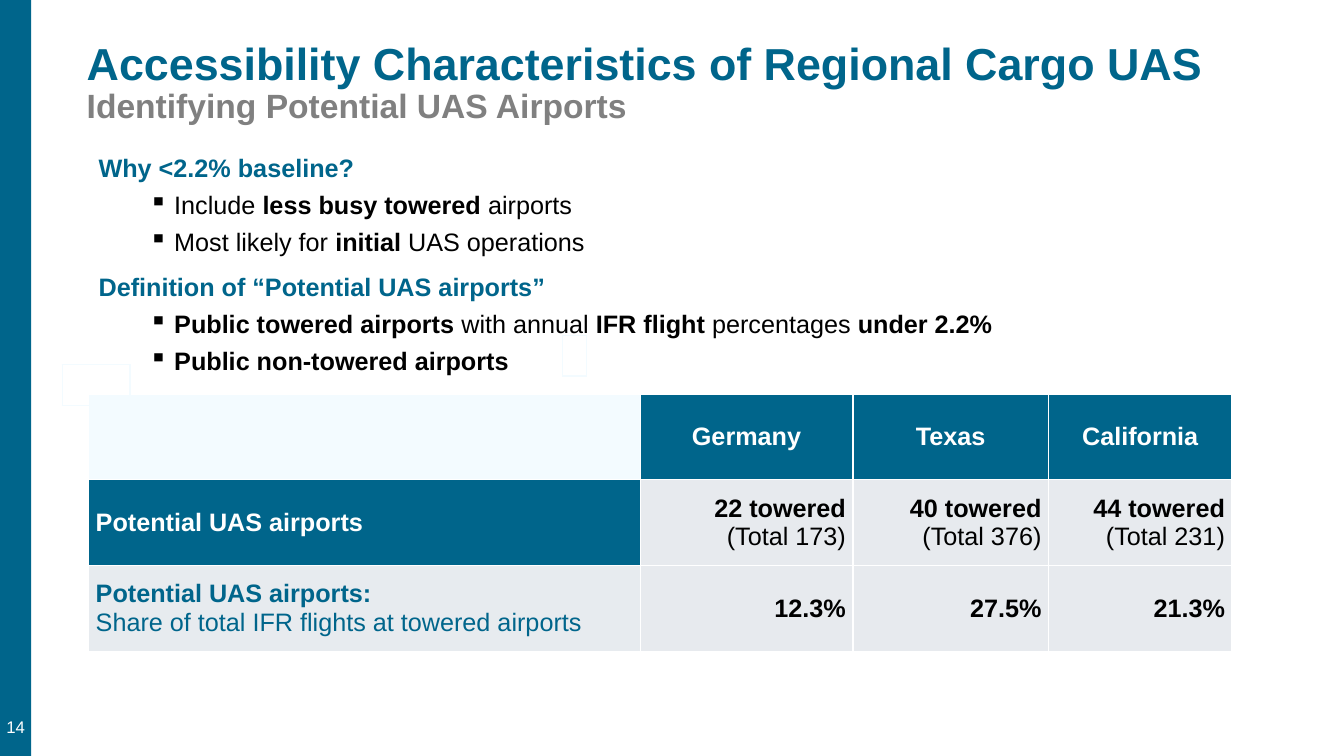
"""Build the slide on accessibility characteristics of regional cargo UAS."""
import lxml.etree
import pptx
import pptx.dml.color
import pptx.enum.shapes
import pptx.enum.text
import pptx.oxml.ns
import pptx.util

RGBColor = pptx.dml.color.RGBColor
ALIGN = pptx.enum.text.PP_ALIGN
ANCHOR = pptx.enum.text.MSO_ANCHOR

TEAL = RGBColor(0x00, 0x65, 0x8B)
GREY = RGBColor(0x80, 0x80, 0x80)
BLACK = RGBColor(0x00, 0x00, 0x00)
WHITE = RGBColor(0xFF, 0xFF, 0xFF)
PALE = RGBColor(0xF3, 0xFB, 0xFF)
SILVER = RGBColor(0xE7, 0xEA, 0xEE)
MIST = RGBColor(0xE7, 0xEB, 0xEF)

TITLE = "Accessibility Characteristics of Regional Cargo UAS"
SUBTITLE = "Identifying Potential UAS Airports"
PAGE_NUMBER = "14"
SECTIONS = [
    ("**Why <2.2% baseline?**", [
        "Include **less busy towered **airports",
        "Most likely for **initial** UAS operations",
    ]),
    ("**Definition of “Potential UAS airports”**", [
        "**Public towered airports **with annual **IFR flight **percentages **under 2.2%**",
        "**Public non-towered airports**",
    ]),
]
ROWS = [
    [[], ["**Germany**"], ["**Texas**"], ["**California**"]],
    [["**Potential UAS airports**"], ["**22 towered**", "(Total 173)"],
     ["**40 towered**", "(Total 376)"], ["**44 towered**", "(Total 231)"]],
    [["**Potential UAS airports:**", "Share of total IFR flights at towered airports"],
     ["**12.3%**"], ["**27.5%**"], ["**21.3%**"]],
]
COLUMN_WIDTHS = [547, 211, 194, 182]
ROW_HEIGHT = 85
FRAMES = [(558, 333, 23, 40), (62, 362, 67, 40)]


def px(length):
    return pptx.util.Emu(length * 9144)


def write(para, text, size, colour, align=ALIGN.LEFT):
    para.alignment = align
    para.font.name = "Arial"
    para.font.size = pptx.util.Pt(size)
    para.font.color.rgb = colour
    para.font.bold = False
    for index, part in enumerate(text.split("**")):
        if part:
            span = para.add_run()
            span.text = part
            if index % 2:
                span.font.bold = True


def next_para(frame):
    first = frame.paragraphs[0]
    return frame.add_paragraph() if first.runs else first


def add_title(page):
    title = page.shapes.title
    title.left, title.top, title.width, title.height = map(px, (76, 36, 1195, 108))
    frame = title.text_frame
    frame.auto_size = pptx.enum.text.MSO_AUTO_SIZE.NONE
    frame.vertical_anchor = ANCHOR.TOP
    para = frame.paragraphs[0]
    para.text = f"{TITLE}\v{SUBTITLE}"
    para.alignment = ALIGN.LEFT
    para.line_spacing = 0.9
    para.font.name = "Arial"
    para.font.size = pptx.util.Pt(32)
    para.font.bold = True
    para.font.color.rgb = TEAL
    subtitle = para.runs[1]
    subtitle.font.size = pptx.util.Pt(24)
    subtitle.font.color.rgb = GREY


def add_sidebar(page):
    bar = page.shapes.add_shape(
        pptx.enum.shapes.MSO_SHAPE.RECTANGLE, 0, 0, px(31), px(750))
    bar.shadow.inherit = False
    bar.fill.solid()
    bar.fill.fore_color.rgb = TEAL
    bar.line.fill.background()
    frame = page.shapes.add_textbox(0, px(584), px(31), px(157)).text_frame
    frame.word_wrap = False
    frame.vertical_anchor = ANCHOR.BOTTOM
    frame.margin_left = frame.margin_right = px(4)
    frame.margin_top = frame.margin_bottom = px(10)
    write(frame.paragraphs[0], PAGE_NUMBER, 12, WHITE, ALIGN.CENTER)


def add_body(page):
    frame = page.shapes.add_textbox(*map(px, (88, 146, 1133, 245))).text_frame
    frame.word_wrap = True
    for number, (heading, points) in enumerate(SECTIONS):
        para = next_para(frame)
        if number:
            para.space_before = pptx.util.Pt(10)
        write(para, heading, 18, TEAL)
        for point in points:
            para = frame.add_paragraph()
            para.level = 1
            para.space_before = pptx.util.Pt(5)
            props = para._p.get_or_add_pPr()
            props.set("marL", str(px(75)))
            props.set("indent", str(px(-25)))
            lxml.etree.SubElement(props, pptx.oxml.ns.qn("a:buChar"), char="▪")
            write(para, point, 18, BLACK)


def add_plain_table(page, rows, columns, place, border):
    table = page.shapes.add_table(rows, columns, *map(px, place)).table
    table.first_row = table.horz_banding = False
    qn = pptx.oxml.ns.qn
    for cell in table.iter_cells():
        props = cell._tc.get_or_add_tcPr()
        for side in "LRTB":
            line = lxml.etree.SubElement(props, qn(f"a:ln{side}"), w="12700")
            fill = lxml.etree.SubElement(line, qn("a:solidFill"))
            lxml.etree.SubElement(fill, qn("a:srgbClr"), val=str(border))
        cell.fill.background()
    return table


def cell_style(row, column):
    if row == 0:
        return (TEAL if column else PALE), WHITE, ALIGN.CENTER
    if column:
        return SILVER, BLACK, ALIGN.RIGHT
    return (TEAL, WHITE, ALIGN.LEFT) if row == 1 else (MIST, TEAL, ALIGN.LEFT)


def add_airport_table(page):
    place = (88, 391, sum(COLUMN_WIDTHS), ROW_HEIGHT * len(ROWS))
    table = add_plain_table(page, len(ROWS), len(COLUMN_WIDTHS), place, WHITE)
    for column, width in zip(table.columns, COLUMN_WIDTHS):
        column.width = px(width)
    for row, entries in enumerate(ROWS):
        for column, lines in enumerate(entries):
            cell = table.cell(row, column)
            fill, colour, align = cell_style(row, column)
            cell.fill.solid()
            cell.fill.fore_color.rgb = fill
            cell.vertical_anchor = ANCHOR.MIDDLE
            cell.margin_left = cell.margin_right = px(7)
            cell.margin_top = cell.margin_bottom = 0
            for text in lines:
                write(next_para(cell.text_frame), text, 18, colour, align)


def main():
    deck = pptx.Presentation()
    deck.slide_width, deck.slide_height = px(1333), px(750)
    page = deck.slides.add_slide(deck.slide_layouts[5])
    add_sidebar(page)
    add_title(page)
    add_body(page)
    add_airport_table(page)
    for place in FRAMES:
        add_plain_table(page, 1, 1, place, PALE)
    deck.save("out.pptx")


if __name__ == "__main__":
    main()
